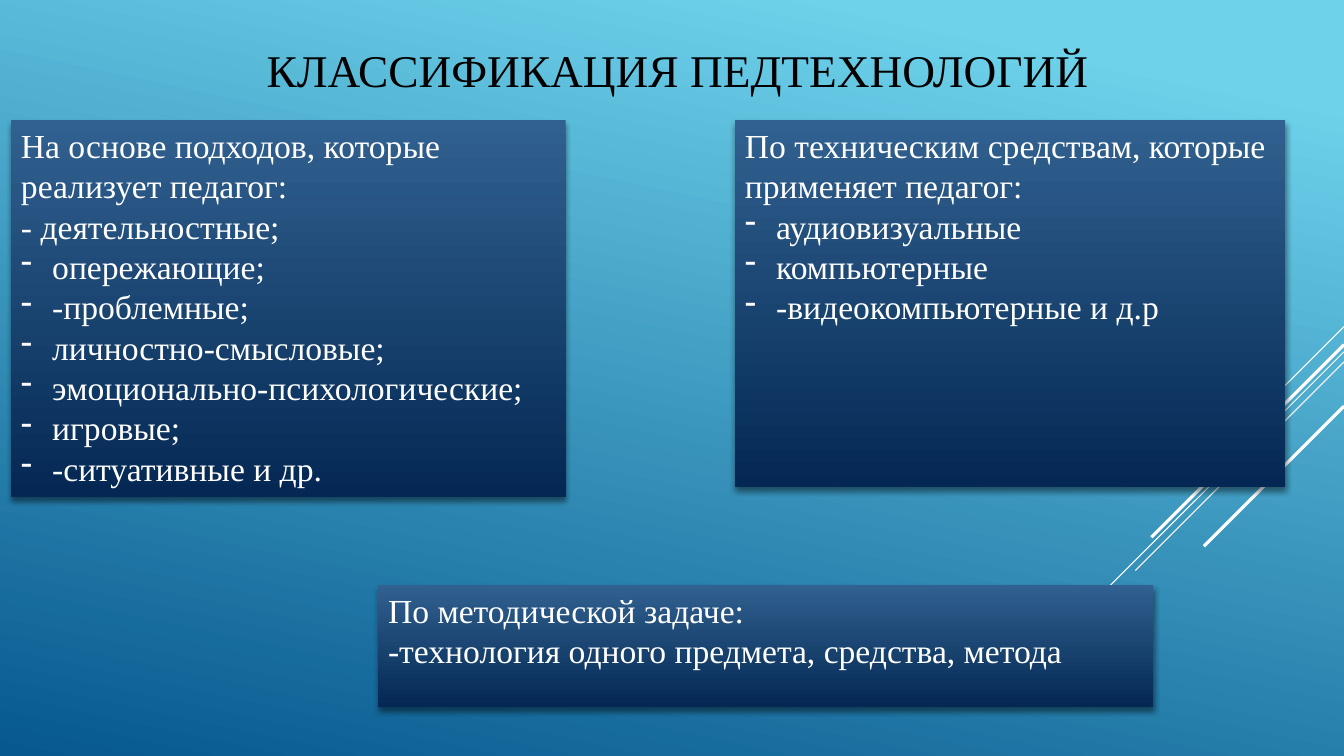
from lxml.etree import SubElement
from pptx import Presentation
from pptx.dml.color import RGBColor
from pptx.enum.shapes import MSO_CONNECTOR as Connector, MSO_SHAPE as Preset
from pptx.enum.text import MSO_ANCHOR as Anchor, MSO_AUTO_SIZE as AutoSize, PP_ALIGN as Align
from pptx.oxml import parse_xml
from pptx.oxml.ns import nsdecls, qn
from pptx.util import Inches, Pt

BLACK = RGBColor(0x00, 0x00, 0x00)
WHITE = RGBColor(0xFF, 0xFF, 0xFF)
SKY = RGBColor(0x6E, 0xD2, 0xEB)
OCEAN = RGBColor(0x06, 0x58, 0x8E)
STEEL = RGBColor(0x31, 0x61, 0x90)
NAVY = RGBColor(0x04, 0x28, 0x53)

WIDTH, HEIGHT = 13.33, 7.5
INDENT = Inches(0.31)
TITLE = "КЛАССИФИКАЦИЯ ПЕДТЕХНОЛОГИЙ"
STRIPES = [(3.24, 1, 0.75), (3.49, 3.26, 0.75), (3.59, 2.07, 0.75), (3.42, 1.91, 2.25), (4.03, 1.39, 2.25)]
CARDS = [
    (
        (0.11, 1.19, 5.5, 3.74),
        ["На основе подходов, которые реализует педагог:", "- деятельностные;"],
        [
            "опережающие;",
            "-проблемные;",
            "личностно-смысловые;",
            "эмоционально-психологические;",
            "игровые;",
            "-ситуативные и др.",
        ],
    ),
    (
        (7.29, 1.19, 5.46, 3.64),
        ["По техническим средствам, которые применяет педагог:"],
        ["аудиовизуальные", "компьютерные", "-видеокомпьютерные и д.р"],
    ),
    (
        (3.75, 5.8, 7.69, 1.21),
        ["По методической задаче:", "-технология одного предмета, средства, метода"],
        [],
    ),
]


def fill_gradient(fill, first, last, angle, start=0):
    """Apply a two-colour gradient with a clockwise angle in degrees."""
    fill.gradient()
    fill.gradient_angle = 360 - angle
    for stop, color, position in zip(fill.gradient_stops, (first, last), (start, 1)):
        stop.color.rgb = color
        stop.position = position


def write_text(para, text, size=24, color=WHITE, align=Align.LEFT, bullet=False):
    """Write one formatted paragraph, with a dash bullet if asked."""
    para.alignment = align
    span = para.add_run()
    span.text = text
    span.font.name = "Times New Roman"
    span.font.size = Pt(size)
    span.font.color.rgb = color
    if bullet:
        props = para._p.get_or_add_pPr()
        props.set("marL", str(INDENT))
        props.set("indent", str(-INDENT))
        SubElement(props, qn("a:buChar")).set("char", "-")


def add_shadow(shape):
    """Give the shape a soft shadow that falls straight down."""
    shape.shadow.inherit = False
    effects = shape._element.spPr.find(qn("a:effectLst"))
    effects.append(parse_xml(
        f'<a:outerShdw {nsdecls("a")} blurRad="{Pt(4)}" dist="{Pt(3)}" dir="5400000" rotWithShape="0">'
        '<a:srgbClr val="000000"><a:alpha val="46000"/></a:srgbClr></a:outerShdw>'
    ))


def add_stripes(page, right):
    """Draw the diagonal stripes down and left from the right edge."""
    for top, reach, weight in STRIPES:
        ends = [Inches(value) for value in (right, top, right - reach, top + reach)]
        stripe = page.shapes.add_connector(Connector.STRAIGHT, *ends)
        stripe.line.color.rgb = WHITE
        stripe.line.width = Pt(weight)
        SubElement(stripe._element.spPr, qn("a:effectLst"))


def add_title(page, left, top, width, height):
    """Place the heading in the title placeholder."""
    title = page.shapes.title
    title.left, title.top, title.width, title.height = map(Inches, (left, top, width, height))
    frame = title.text_frame
    frame.auto_size = AutoSize.NONE
    frame.vertical_anchor = Anchor.MIDDLE
    write_text(frame.paragraphs[0], TITLE, size=32.4, color=BLACK, align=Align.CENTER)


def add_card(page, bounds, intro, items):
    """Draw one classification card with its intro lines and bullets."""
    card = page.shapes.add_shape(Preset.RECTANGLE, *map(Inches, bounds))
    fill_gradient(card.fill, STEEL, NAVY, 90)
    card.line.fill.background()
    add_shadow(card)
    frame = card.text_frame
    frame.word_wrap = True
    frame.vertical_anchor = Anchor.TOP
    for index, text in enumerate(intro + items):
        para = frame.add_paragraph() if index else frame.paragraphs[0]
        write_text(para, text, bullet=index >= len(intro))


def main():
    """Build the slide and save the deck."""
    deck = Presentation()
    deck.slide_width, deck.slide_height = Inches(WIDTH), Inches(HEIGHT)
    page = deck.slides.add_slide(deck.slide_layouts.get_by_name("Title Only"))
    fill_gradient(page.background.fill, SKY, OCEAN, 102, start=0.1)
    add_stripes(page, WIDTH)
    add_title(page, 0.97, 0.4, 11.5, 0.58)
    for bounds, intro, items in CARDS:
        add_card(page, bounds, intro, items)
    deck.save("out.pptx")


if __name__ == "__main__":
    main()
